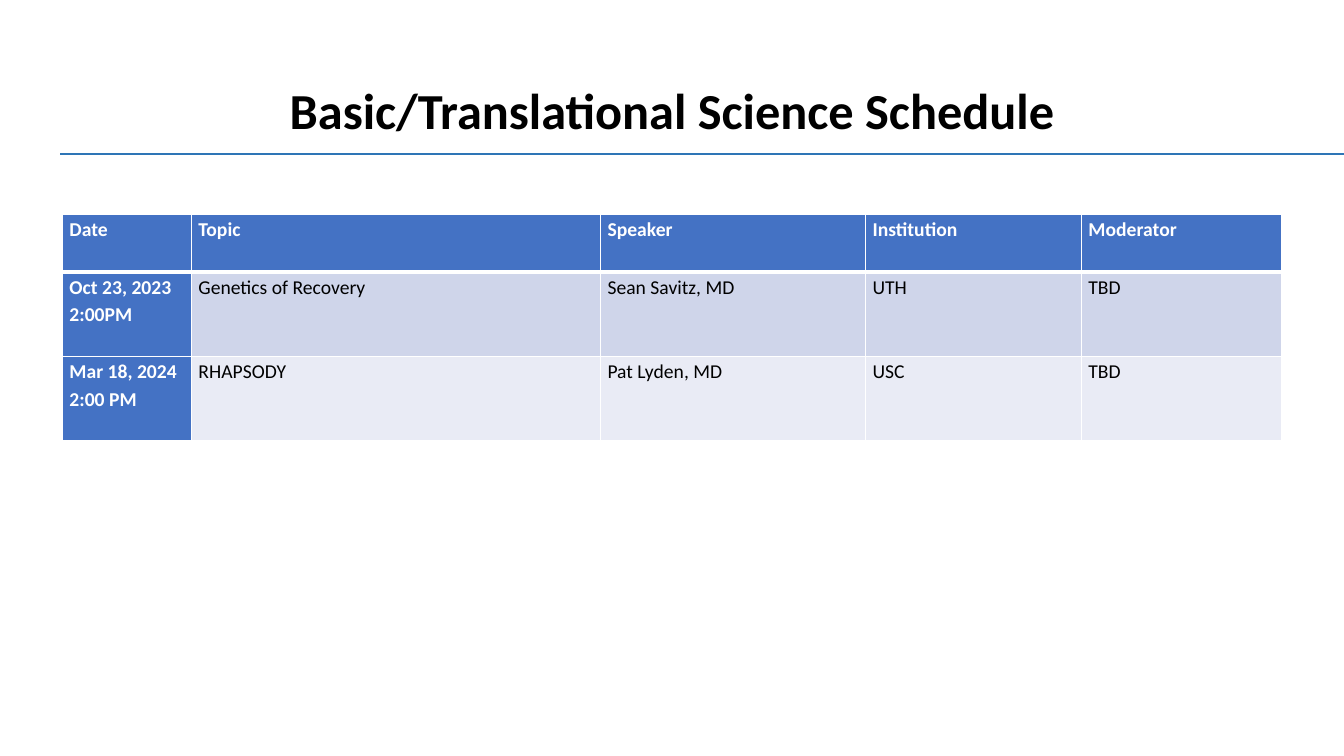
from lxml import etree
from pptx import Presentation
from pptx.dml.color import RGBColor
from pptx.enum.shapes import MSO_CONNECTOR
from pptx.enum.text import MSO_ANCHOR, MSO_AUTO_SIZE, PP_ALIGN
from pptx.oxml.ns import qn
from pptx.util import Cm, Pt

STRAIGHT = MSO_CONNECTOR.STRAIGHT
MIDDLE, TOP = MSO_ANCHOR.MIDDLE, MSO_ANCHOR.TOP
CENTER, LEFT = PP_ALIGN.CENTER, PP_ALIGN.LEFT
NO_AUTOFIT = MSO_AUTO_SIZE.NONE

BLACK = RGBColor(0x00, 0x00, 0x00)
WHITE = RGBColor(0xFF, 0xFF, 0xFF)
HEADER_BLUE = RGBColor(0x44, 0x72, 0xC4)
RULE_BLUE = RGBColor(0x2E, 0x75, 0xB6)
BAND_COLORS = (RGBColor(0xCF, 0xD5, 0xEA), RGBColor(0xE9, 0xEB, 0xF5))

SCHEDULE = [
    ["Date", "Topic", "Speaker", "Institution", "Moderator"],
    ["Oct 23, 2023 2:00PM", "Genetics of Recovery", "Sean Savitz, MD", "UTH", "TBD"],
    ["Mar 18, 2024\n2:00 PM", "RHAPSODY", "Pat Lyden, MD", "USC", "TBD"],
]
COLUMN_WIDTHS = [3.25, 10.31, 6.68, 5.44, 5.05]
ROW_HEIGHTS = [1.45, 2.13, 2.13]


def set_attributes(target, values):
    for name, value in values.items():
        setattr(target, name, value)


class SlideBuilder:
    font_name = "Calibri"

    def __init__(self, presentation):
        self.slide = presentation.slides.add_slide(presentation.slide_layouts[5])

    def fill_text(self, text_frame, text, size, color, bold, alignment, spacing):
        text_frame.text = text
        for paragraph in text_frame.paragraphs:
            set_attributes(paragraph, {"alignment": alignment, "line_spacing": spacing})
            font = paragraph.runs[0].font
            set_attributes(font, {"name": self.font_name, "size": Pt(size), "bold": bold})
            font.color.rgb = color

    def title(self, text, left, top, width, height):
        shape = self.slide.shapes.title
        set_attributes(shape, {"left": Cm(left), "top": Cm(top),
                               "width": Cm(width), "height": Cm(height)})
        set_attributes(shape.text_frame, {"vertical_anchor": MIDDLE, "word_wrap": True,
                                          "auto_size": NO_AUTOFIT})
        self.fill_text(shape.text_frame, text, 36, BLACK, True, CENTER, 0.9)

    def rule(self, left, right, top):
        connector = self.slide.shapes.add_connector(
            STRAIGHT, Cm(left), Cm(top), Cm(right), Cm(top))
        connector.line.color.rgb = RULE_BLUE
        connector.line.width = Pt(1.5)
        etree.SubElement(connector._element.spPr, qn("a:effectLst"))

    def borders(self, cell, widths):
        """Draw white borders; widths maps each side (L, R, T, B) to points."""
        properties = cell._tc.get_or_add_tcPr()
        for side, width in widths.items():
            line = etree.SubElement(properties, qn(f"a:ln{side}"), w=str(Pt(width)))
            fill = etree.SubElement(line, qn("a:solidFill"))
            etree.SubElement(fill, qn("a:srgbClr"), val=str(WHITE))

    def table(self, rows, left, top, column_widths, row_heights):
        frame = self.slide.shapes.add_table(
            len(rows), len(column_widths), Cm(left), Cm(top),
            Cm(sum(column_widths)), Cm(sum(row_heights)))
        table = frame.table
        set_attributes(table, {"first_row": True, "first_col": True, "horz_banding": False})
        for column, width in zip(table.columns, column_widths):
            column.width = Cm(width)
        for row, height in zip(table.rows, row_heights):
            row.height = Cm(height)
        for row_index, texts in enumerate(rows):
            for column_index, text in enumerate(texts):
                self.cell(table.cell(row_index, column_index), text, row_index, column_index)

    def cell(self, cell, text, row_index, column_index):
        is_heading = row_index == 0 or column_index == 0
        set_attributes(cell, {"margin_left": Cm(0.18), "margin_right": Cm(0.18),
                              "margin_top": 0, "margin_bottom": 0, "vertical_anchor": TOP})
        self.borders(cell, {"L": 1, "R": 1, "T": 3 if row_index == 1 else 1,
                            "B": 3 if row_index == 0 else 1})
        cell.fill.solid()
        cell.fill.fore_color.rgb = HEADER_BLUE if is_heading else BAND_COLORS[(row_index - 1) % 2]
        self.fill_text(cell.text_frame, text, 14, WHITE if is_heading else BLACK,
                       is_heading, LEFT, 1.15)


def main():
    presentation = Presentation()
    set_attributes(presentation, {"slide_width": Cm(33.87), "slide_height": Cm(19.05)})
    builder = SlideBuilder(presentation)
    builder.title("Basic/Translational Science Schedule", 2.34, 1.02, 29.21, 3.68)
    builder.table(SCHEDULE, 1.57, 5.4, COLUMN_WIDTHS, ROW_HEIGHTS)
    builder.rule(1.52, 33.87, 3.89)
    presentation.save("out.pptx")


if __name__ == "__main__":
    main()
